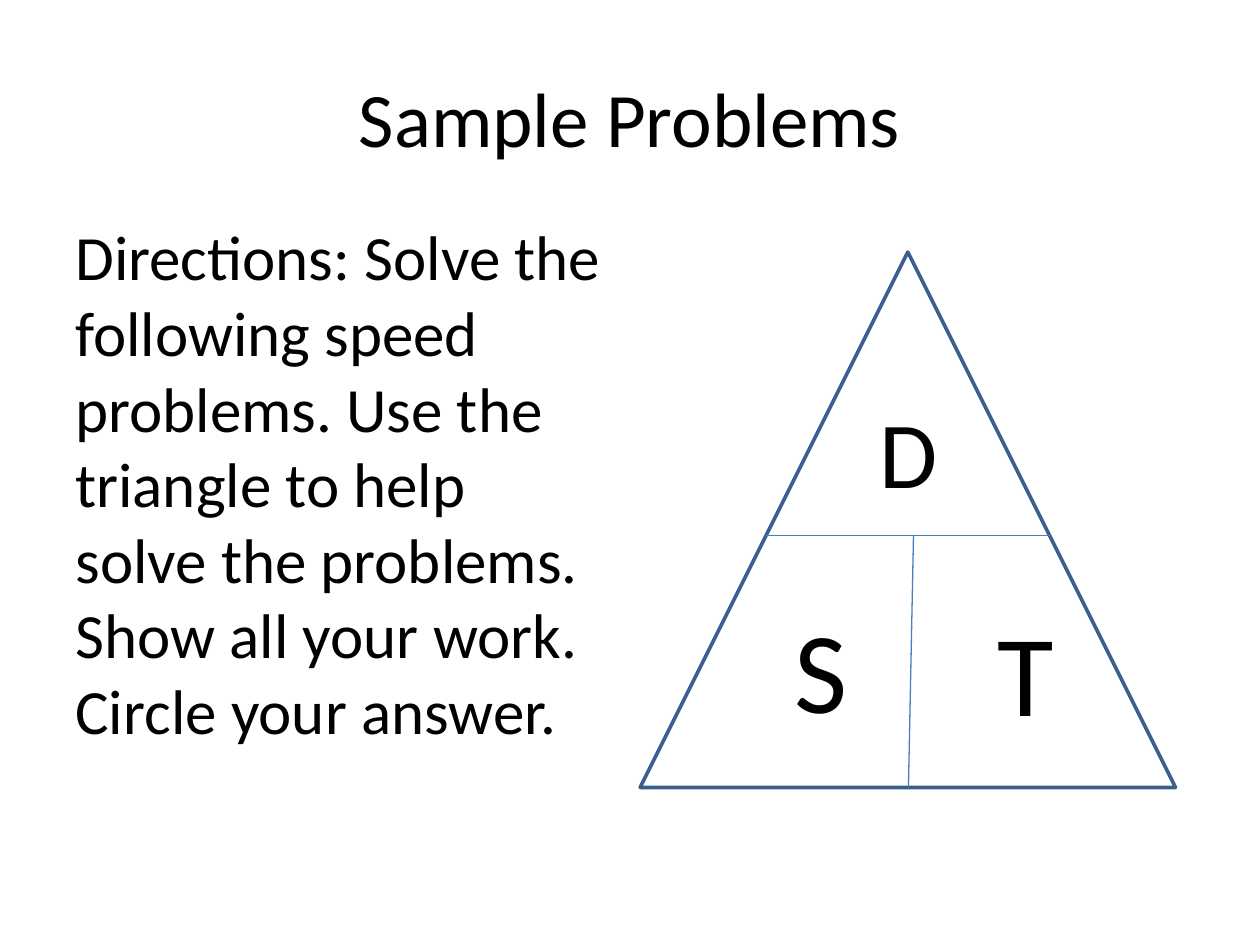
"""Build the speed-triangle sample problems slide."""
from dataclasses import dataclass

import pptx
import pptx.dml.color
import pptx.enum.shapes
import pptx.enum.text
import pptx.oxml
import pptx.util
from pptx.util import Inches

ALIGN = pptx.enum.text.PP_ALIGN
ANCHOR = pptx.enum.text.MSO_ANCHOR


@dataclass(frozen=True)
class Theme:
    """Colours, font and type sizes of the slide."""
    font: str = "Calibri"
    ink: str = "000000"
    outline: str = "3A5F8C"
    divider: str = "4B7EBC"
    title: int = 44
    body: int = 36
    distance: int = 54
    letter: int = 66
    spacer: int = 24


THEME = Theme()


def rgb(value):
    """Turn a hex string into a colour."""
    return pptx.dml.color.RGBColor.from_string(value)


def add_text(slide, box, runs, align=ALIGN.CENTER, anchor=ANCHOR.TOP):
    """Add a wrapped text box from (wording, size) runs."""
    frame = slide.shapes.add_textbox(*map(Inches, box)).text_frame
    frame.word_wrap = True
    frame.vertical_anchor = anchor
    paragraph = frame.paragraphs[0]
    paragraph.alignment = align
    for wording, size in runs:
        run = paragraph.add_run()
        run.text = wording
        run.font.name = THEME.font
        run.font.size = pptx.util.Pt(size)
        run.font.color.rgb = rgb(THEME.ink)
    return frame


def add_triangle(slide, box):
    """Add the outlined formula triangle."""
    triangle = slide.shapes.add_shape(
        pptx.enum.shapes.MSO_SHAPE.ISOSCELES_TRIANGLE, *map(Inches, box))
    triangle.shadow.inherit = False
    triangle.fill.background()
    triangle.line.color.rgb = rgb(THEME.outline)
    triangle.line.width = pptx.util.Pt(2)


def add_divider(slide, start, end):
    """Add a thin straight divider without a shadow."""
    divider = slide.shapes.add_connector(
        pptx.enum.shapes.MSO_CONNECTOR.STRAIGHT, *map(Inches, start + end))
    divider.line.color.rgb = rgb(THEME.divider)
    divider.line.width = pptx.util.Pt(0.75)
    divider._element.spPr.append(pptx.oxml.parse_xml(
        '<a:effectLst xmlns:a="http://schemas.openxmlformats.org/drawingml/2006/main"/>'))


def main():
    """Build and save the slide."""
    deck = pptx.Presentation()
    deck.slide_width, deck.slide_height = Inches(10), Inches(7.5)
    slide = deck.slides.add_slide(deck.slide_layouts[6])

    add_text(slide, (0.5, 0.3, 9, 1.25), [("Sample Problems", THEME.title)],
             anchor=ANCHOR.MIDDLE)
    directions = ("Directions: Solve the following speed problems. Use the triangle "
                  "to help solve the problems. Show all your work. Circle your answer.")
    add_text(slide, (0.5, 1.68, 4.42, 5.57), [(directions, THEME.body)], ALIGN.LEFT)

    add_text(slide, (7.41, 4.41, 1.26, 1.51), [(" T", THEME.letter)],
             anchor=ANCHOR.BOTTOM)
    add_text(slide, (5.75, 4.7, 1.46, 1.42),
             [(" ", THEME.spacer), ("S", THEME.letter)])
    add_triangle(slide, (5.08, 2, 4.25, 4.25))
    add_divider(slide, (6.08, 4.25), (8.33, 4.25))
    add_divider(slide, (7.25, 4.25), (7.21, 6.25))
    distance = add_text(slide, (6.67, 3.08, 1.08, 1.01), [("D", THEME.distance)])
    distance.auto_size = pptx.enum.text.MSO_AUTO_SIZE.SHAPE_TO_FIT_TEXT

    deck.save("out.pptx")


if __name__ == "__main__":
    main()
